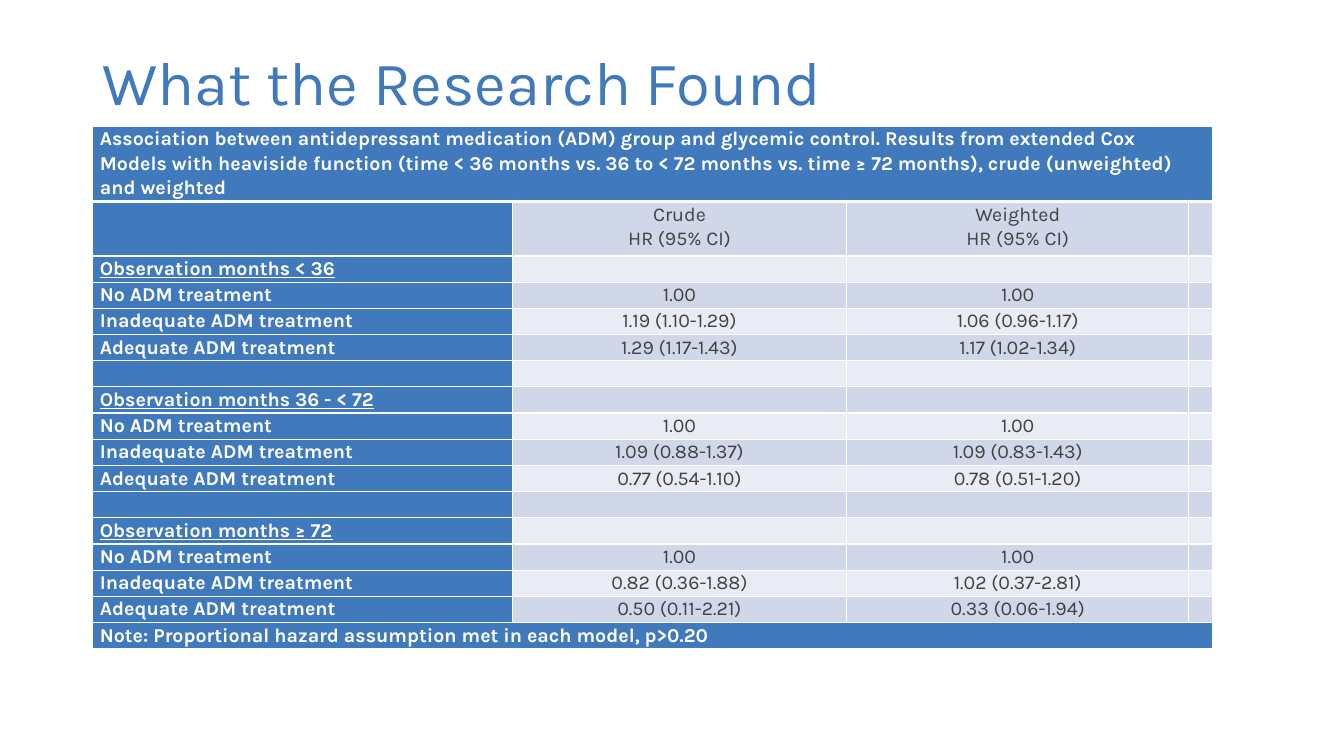
from lxml import etree
from pptx import Presentation
from pptx.dml.color import RGBColor
from pptx.enum.text import MSO_ANCHOR, PP_ALIGN
from pptx.oxml.ns import qn
from pptx.util import Inches, Pt

LEFT, CENTER = PP_ALIGN.LEFT, PP_ALIGN.CENTER
MIDDLE = MSO_ANCHOR.MIDDLE
FONT, BLUE, WHITE, INK = "Karla", "4179BD", "FFFFFF", "414141"
BANDS = ("E9ECF4", "CFD7E8")

TITLE = "What the Research Found"
CAPTION = (
    "Association between antidepressant medication (ADM) group and glycemic control. "
    "Results from extended Cox Models with heaviside function (time < 36 months vs. "
    "36 to < 72 months vs. time ≥ 72 months), crude (unweighted) and weighted"
)
HEADINGS = ("", "Crude\nHR (95% CI)", "Weighted\nHR (95% CI)")
TREATMENTS = ("No ADM treatment", "Inadequate ADM treatment", "Adequate ADM treatment")
PERIODS = {
    "Observation months < 36": [
        ("1.00", "1.00"),
        ("1.19 (1.10-1.29)", "1.06 (0.96-1.17)"),
        ("1.29 (1.17-1.43)", "1.17 (1.02-1.34)"),
    ],
    "Observation months 36 - < 72": [
        ("1.00", "1.00"),
        ("1.09 (0.88-1.37)", "1.09 (0.83-1.43)"),
        ("0.77 (0.54-1.10)", "0.78 (0.51-1.20)"),
    ],
    "Observation months ≥ 72": [
        ("1.00", "1.00"),
        ("0.82 (0.36-1.88)", "1.02 (0.37-2.81)"),
        ("0.50 (0.11-2.21)", "0.33 (0.06-1.94)"),
    ],
}
NOTE = "Note: Proportional hazard assumption met in each model, p>0.20"

SLIDE_SIZE = (13.33, 7.5)
TITLE_BOX = (0.92, 0.4, 11.5, 0.9)
TABLE_LEFT, TABLE_TOP = 0.92, 1.25
COLUMNS = (4.16, 3.32, 3.39, 0.12)
CAPTION_HEIGHT, HEADING_HEIGHT, ROW_HEIGHT = 0.7, 0.54, 0.26


def color(value):
    return RGBColor.from_string(value)


def write(frame, text, fill, size, spacing, align=LEFT, **style):
    frame.text = text
    for para in frame.paragraphs:
        para.alignment, para.line_spacing = align, spacing
        for span in para.runs:
            span.font.color.rgb = color(fill)
            for name, value in dict(name=FONT, size=Pt(size), **style).items():
                setattr(span.font, name, value)
        if not text:
            etree.SubElement(para._p, qn("a:endParaRPr"), sz=str(size * 100))


def add_borders(cell, widths):
    properties = cell._tc.get_or_add_tcPr()
    for side, width in widths.items():
        line = etree.SubElement(properties, qn(f"a:ln{side}"), w=str(Pt(width)))
        solid = etree.SubElement(line, qn("a:solidFill"))
        etree.SubElement(solid, qn("a:srgbClr"), val=WHITE)


def table_rows():
    rows = [(CAPTION,), HEADINGS]
    for index, (period, ratios) in enumerate(PERIODS.items()):
        rows += [("",)] if index else []
        rows.append((period,))
        rows += [(name, *pair) for name, pair in zip(TREATMENTS, ratios)]
    return rows + [(NOTE,)]


def add_title(page):
    box = page.shapes.add_textbox(*map(Inches, TITLE_BOX))
    box.text_frame.word_wrap = True
    box.text_frame.vertical_anchor = MIDDLE
    write(box.text_frame, TITLE, BLUE, 44, 0.9)


def add_results(page):
    rows = table_rows()
    last_row, last_column = len(rows) - 1, len(COLUMNS) - 1
    heights = [CAPTION_HEIGHT, HEADING_HEIGHT] + [ROW_HEIGHT] * (len(rows) - 2)
    area = (TABLE_LEFT, TABLE_TOP, sum(COLUMNS), sum(heights))
    table = page.shapes.add_table(len(rows), len(COLUMNS), *map(Inches, area)).table
    for column, width in zip(table.columns, COLUMNS):
        column.width = Inches(width)
    for r, texts in enumerate(rows):
        table.rows[r].height = Inches(heights[r])
        for c in range(len(COLUMNS)):
            cell = table.cell(r, c)
            text = texts[c] if c < len(texts) else ""
            side = Inches(0.1 if c == last_column else 0.07)
            margins = dict(margin_left=side, margin_right=side, margin_top=0, margin_bottom=0)
            for name, value in margins.items():
                setattr(cell, name, value)
            add_borders(cell, {"L": 1, "R": 1, "T": 3 if r == 1 else 1, "B": 1 if r else 3})
            label = c == 0 or r in (0, last_row)
            cell.fill.solid()
            cell.fill.fore_color.rgb = color(BLUE if label else BANDS[r % 2])
            write(cell.text_frame, text, WHITE if label else INK, 14, 1.07,
                  LEFT if label else CENTER, bold=label, underline=text in PERIODS)
    for r in (0, last_row):
        table.cell(r, 0).merge(table.cell(r, last_column))


def main():
    """Build the slide of antidepressant treatment and glycemic control results."""
    deck = Presentation()
    deck.slide_width, deck.slide_height = map(Inches, SLIDE_SIZE)
    page = deck.slides.add_slide(deck.slide_layouts[6])
    add_title(page)
    add_results(page)
    deck.save("out.pptx")


if __name__ == "__main__":
    main()
